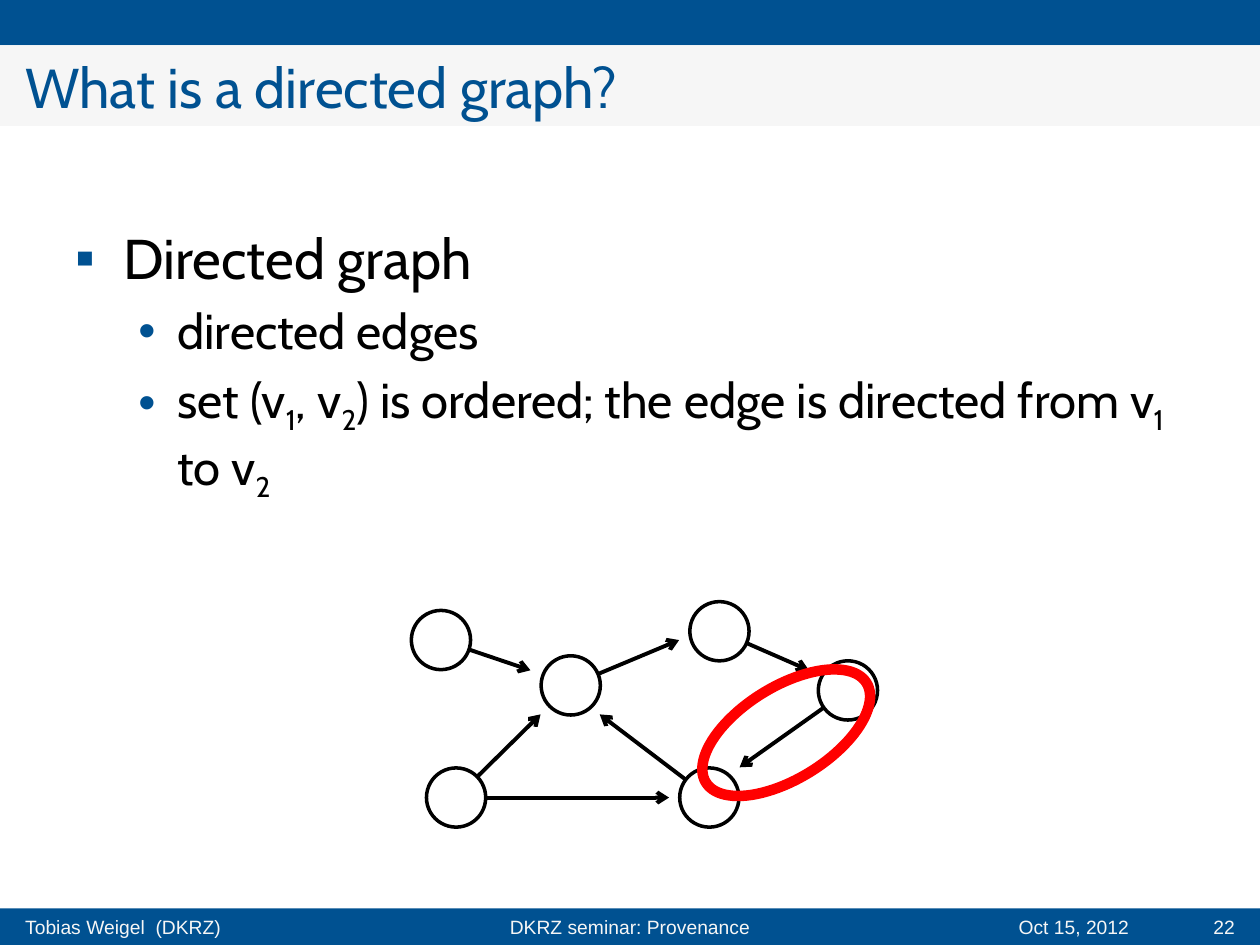
from lxml.etree import SubElement
from pptx import Presentation
from pptx.dml.color import RGBColor
from pptx.enum.shapes import MSO_CONNECTOR, MSO_SHAPE
from pptx.enum.text import MSO_ANCHOR, PP_ALIGN
from pptx.oxml.ns import qn
from pptx.util import Inches, Pt

theme = {
    "blue": RGBColor(0x00, 0x51, 0x91),
    "pale": RGBColor(0xF6, 0xF6, 0xF6),
    "black": RGBColor(0, 0, 0),
    "white": RGBColor(255, 255, 255),
    "red": RGBColor(255, 0, 0),
    "head": 32, "sub": 28, "foot": 11,
    "font": "Cabin", "plain": "Arial",
}

deck = Presentation()
deck.slide_width, deck.slide_height = Inches(10), Inches(7.5)
slide = deck.slides.add_slide(deck.slide_layouts[6])
shapes = slide.shapes
unit = deck.slide_width / 100  # grid of 100 columns by 75 rows


def grid(*cells):
    return [round(cell * unit) for cell in cells]


def write(frame, text, size="head", font="font", color="black", align=PP_ALIGN.LEFT,
          side=0.1, level=0, mark=None, left=0, hang=0, before=0, first=True):
    """Write one paragraph; the parts between underscores are subscripts."""
    frame.word_wrap = True
    frame.vertical_anchor = MSO_ANCHOR.MIDDLE
    frame.margin_left = frame.margin_right = Inches(side)
    para = frame.paragraphs[0] if first else frame.add_paragraph()
    para.alignment, para.level = align, level
    if before:
        para.space_before = Pt(before)
    if mark:
        props = para._p.get_or_add_pPr()
        props.set("marL", str(Inches(left)))
        props.set("indent", str(-Inches(hang)))
        tint = SubElement(props, qn("a:buClr"))
        SubElement(tint, qn("a:srgbClr")).set("val", str(theme["blue"]))
        SubElement(props, qn("a:buFont")).set("typeface", theme["plain"])
        SubElement(props, qn("a:buChar")).set("char", mark)
    for i, part in enumerate(text.split("_")):
        run = para.add_run()
        run.text = part
        run.font.size = Pt(theme[size])
        run.font.name = theme[font]
        run.font.color.rgb = theme[color]
        if i % 2:
            run.font._element.set("baseline", "-25000")


# Bands: top, bottom and title
for top, height, color in [(0, 3.6, "blue"), (72.1, 2.9, "blue"), (3.6, 6.4, "pale")]:
    band = shapes.add_shape(MSO_SHAPE.RECTANGLE, *grid(0, top, 100, height))
    band.shadow.inherit = False
    band.fill.solid()
    band.fill.fore_color.rgb = theme[color]
    band.line.fill.background()
write(band.text_frame, "What is a directed graph?", color="blue", side=0.2)

# Footer
for text, left, width, align, side in [
    ("Tobias Weigel  (DKRZ)", 0, 25.6, PP_ALIGN.LEFT, 0.2),
    ("DKRZ seminar: Provenance", 22.4, 55.2, PP_ALIGN.CENTER, 0.1),
    ("Oct 15, 2012", 79.1, 11.5, PP_ALIGN.RIGHT, 0.1),
    ("22", 91.7, 8.3, PP_ALIGN.RIGHT, 0.2),
]:
    box = shapes.add_textbox(*grid(left, 72.1, width, 2.9))
    write(box.text_frame, text, size="foot", font="plain", color="pale",
          align=align, side=side)

# Body
body = shapes.add_textbox(*grid(5, 13.1, 90, 31.5)).text_frame
write(body, "Directed graph", mark="▪", left=0.38, hang=0.38)
for text in ["directed edges",
             "set (v_1_, v_2_) is ordered; the edge is directed from v_1 _to v_2_"]:
    write(body, text, size="sub", level=1, mark="•", left=0.81, hang=0.31,
          before=5.6, first=False)

# Graph: node centres, then edges with the tip's offset from the target
nodes = {"a": (35, 50.8), "b": (67.3, 54.8), "c": (45.3, 54.4),
         "d": (36.2, 63.3), "e": (56.3, 63.3), "f": (57.1, 50.1)}
edges = [("a", "c", -3.2, -1.2), ("d", "c", -2.4, 2.3), ("c", "f", -3.2, 0.7),
         ("f", "b", -3.1, -1.6), ("b", "e", 2.4, -2.4), ("e", "c", 2.3, 2.3),
         ("d", "e", -3.2, 0)]
for start, end, dx, dy in edges:
    x, y = nodes[end]
    edge = shapes.add_connector(MSO_CONNECTOR.STRAIGHT, *grid(*nodes[start], x + dx, y + dy))
    edge.line.color.rgb = theme["black"]
    edge.line.width = Pt(2.25)
    SubElement(edge.line._get_or_add_ln(), qn("a:tailEnd")).set("type", "arrow")
    SubElement(edge._element.spPr, qn("a:effectLst"))

size = 4.7
for x, y in nodes.values():
    node = shapes.add_shape(MSO_SHAPE.OVAL, *grid(x - size / 2, y - size / 2, size, size))
    node.shadow.inherit = False
    node.fill.solid()
    node.fill.fore_color.rgb = theme["white"]
    node.line.color.rgb = theme["black"]
    node.line.width = Pt(2)

# Red ring around one edge
ring = shapes.add_shape(MSO_SHAPE.OVAL, *grid(54.9, 54.5, 15, 7.3))
ring.shadow.inherit = False
ring.rotation = 328.2
ring.fill.background()
ring.line.color.rgb = theme["red"]
ring.line.width = Pt(6)

deck.save("out.pptx")
